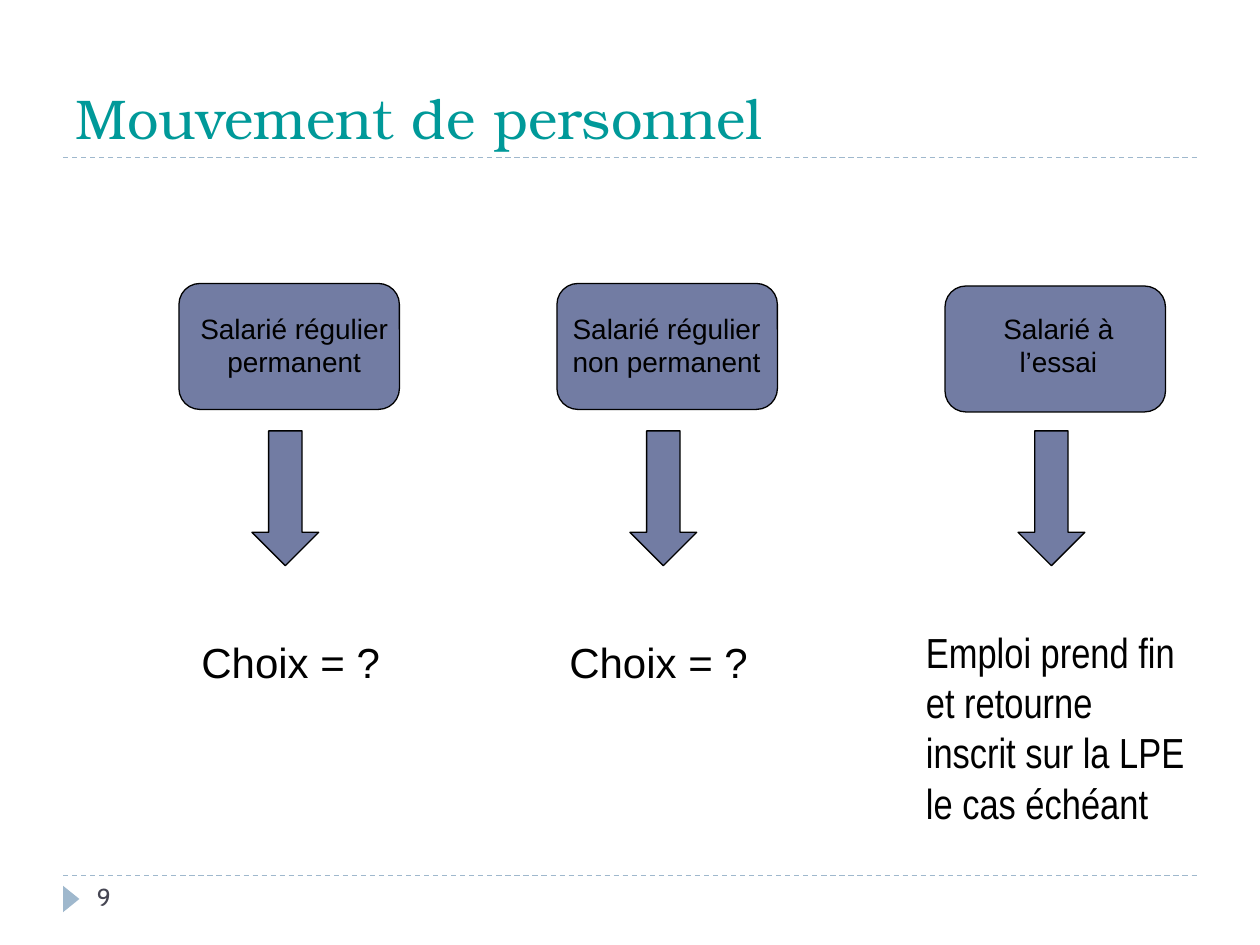
from dataclasses import dataclass

import pptx
import pptx.dml.color
import pptx.enum.dml
import pptx.enum.shapes
import pptx.enum.text
import pptx.oxml.ns
import pptx.util
from lxml import etree

Inches = pptx.util.Inches
Shapes = pptx.enum.shapes.MSO_SHAPE
Align = pptx.enum.text.PP_ALIGN
Anchor = pptx.enum.text.MSO_ANCHOR


@dataclass(frozen=True)
class Theme:
    title: str = "009999"
    rule: str = "9FB8CD"
    block: str = "727CA3"
    ink: str = "000000"
    number: str = "464653"
    title_font: str = "TeX Gyre Bonum"
    body_font: str = "Arial"
    narrow_font: str = "Arial Narrow"
    number_font: str = "Cabin"
    title_size: int = 32
    outcome_size: int = 24
    label_size: int = 16
    number_size: int = 14
    line_width: float = 0.75


THEME = Theme()

# One row per status: box left and top, arrow left, label, label left and
# width, outcome, outcome left, top, width and height, outcome font
STATUSES = [
    (1.42, 2.25, 2, "Salarié régulier permanent", 1.42, 1.83,
     "Choix = ?", (1.5, 5, 1.67, 0.5), THEME.body_font),
    (4.42, 2.25, 5, "Salarié régulier non permanent", 4.25, 2.08,
     "Choix = ?", (4.42, 5, 1.67, 0.5), THEME.body_font),
    (7.5, 2.27, 8.08, "Salarié à l’essai", 7.66, 1.48,
     "Emploi prend fin et retourne inscrit sur la LPE le cas échéant",
     (7.25, 4.92, 2.25, 2.12), THEME.narrow_font),
]


def rgb(value):
    return pptx.dml.color.RGBColor.from_string(value)


def write(text_frame, text, font, size, color, align=Align.LEFT, anchor=Anchor.TOP):
    text_frame.word_wrap = True
    text_frame.auto_size = pptx.enum.text.MSO_AUTO_SIZE.NONE
    text_frame.vertical_anchor = anchor
    text_frame.text = text
    paragraph = text_frame.paragraphs[0]
    paragraph.alignment = align
    for run in paragraph.runs:
        run.font.name = font
        run.font.size = pptx.util.Pt(size)
        run.font.color.rgb = rgb(color)


def add_title(slide, text):
    title = slide.shapes.title
    title.left, title.top = Inches(0.5), Inches(0.25)
    title.width, title.height = Inches(9), Inches(1)
    write(title.text_frame, text, THEME.title_font, THEME.title_size,
          THEME.title, anchor=Anchor.BOTTOM)


def add_text(slide, box, text, font, size, color, align=Align.LEFT):
    shape = slide.shapes.add_textbox(*map(Inches, box))
    write(shape.text_frame, text, font, size, color, align)


def add_rule(slide, top):
    rule = slide.shapes.add_connector(
        pptx.enum.shapes.MSO_CONNECTOR.STRAIGHT,
        Inches(0.5), Inches(top), Inches(9.5), Inches(top))
    rule.line.color.rgb = rgb(THEME.rule)
    rule.line.width = pptx.util.Pt(THEME.line_width)
    rule.line.dash_style = pptx.enum.dml.MSO_LINE.DASH
    properties = rule._element.find(pptx.oxml.ns.qn("p:spPr"))
    etree.SubElement(properties, pptx.oxml.ns.qn("a:effectLst"))


def add_block(slide, kind, box, fill, line=None):
    shape = slide.shapes.add_shape(kind, *map(Inches, box))
    shape.shadow.inherit = False
    shape.fill.solid()
    shape.fill.fore_color.rgb = rgb(fill)
    if line:
        shape.line.color.rgb = rgb(line)
        shape.line.width = pptx.util.Pt(THEME.line_width)
    else:
        shape.line.fill.background()
    return shape


def add_status(slide, box_left, box_top, arrow_left, label, label_left,
               label_width, outcome, outcome_box, outcome_font):
    add_block(slide, Shapes.ROUNDED_RECTANGLE, (box_left, box_top, 1.75, 1),
              THEME.block, THEME.ink)
    add_text(slide, (label_left, 2.42, label_width, 0.64), label,
             THEME.body_font, THEME.label_size, THEME.ink, Align.CENTER)
    add_block(slide, Shapes.DOWN_ARROW, (arrow_left, 3.42, 0.53, 1.07),
              THEME.block, THEME.ink)
    add_text(slide, outcome_box, outcome, outcome_font,
             THEME.outcome_size, THEME.ink)


def main():
    presentation = pptx.Presentation()
    presentation.slide_width = Inches(10)
    presentation.slide_height = Inches(7.5)
    slide = presentation.slides.add_slide(presentation.slide_layouts[5])

    # Frame: rules, page marker and page number
    for top in (6.95, 1.25):
        add_rule(slide, top)
    marker = add_block(slide, Shapes.ISOSCELES_TRIANGLE,
                       (0.46, 7.07, 0.21, 0.13), THEME.rule)
    marker.rotation = 90
    add_text(slide, (0.67, 6.95, 2.17, 0.4), "9", THEME.number_font,
             THEME.number_size, THEME.number)

    # Title
    add_title(slide, "Mouvement de personnel")

    # Status, arrow and outcome columns
    for status in STATUSES:
        add_status(slide, *status)

    presentation.save("out.pptx")


if __name__ == "__main__":
    main()
